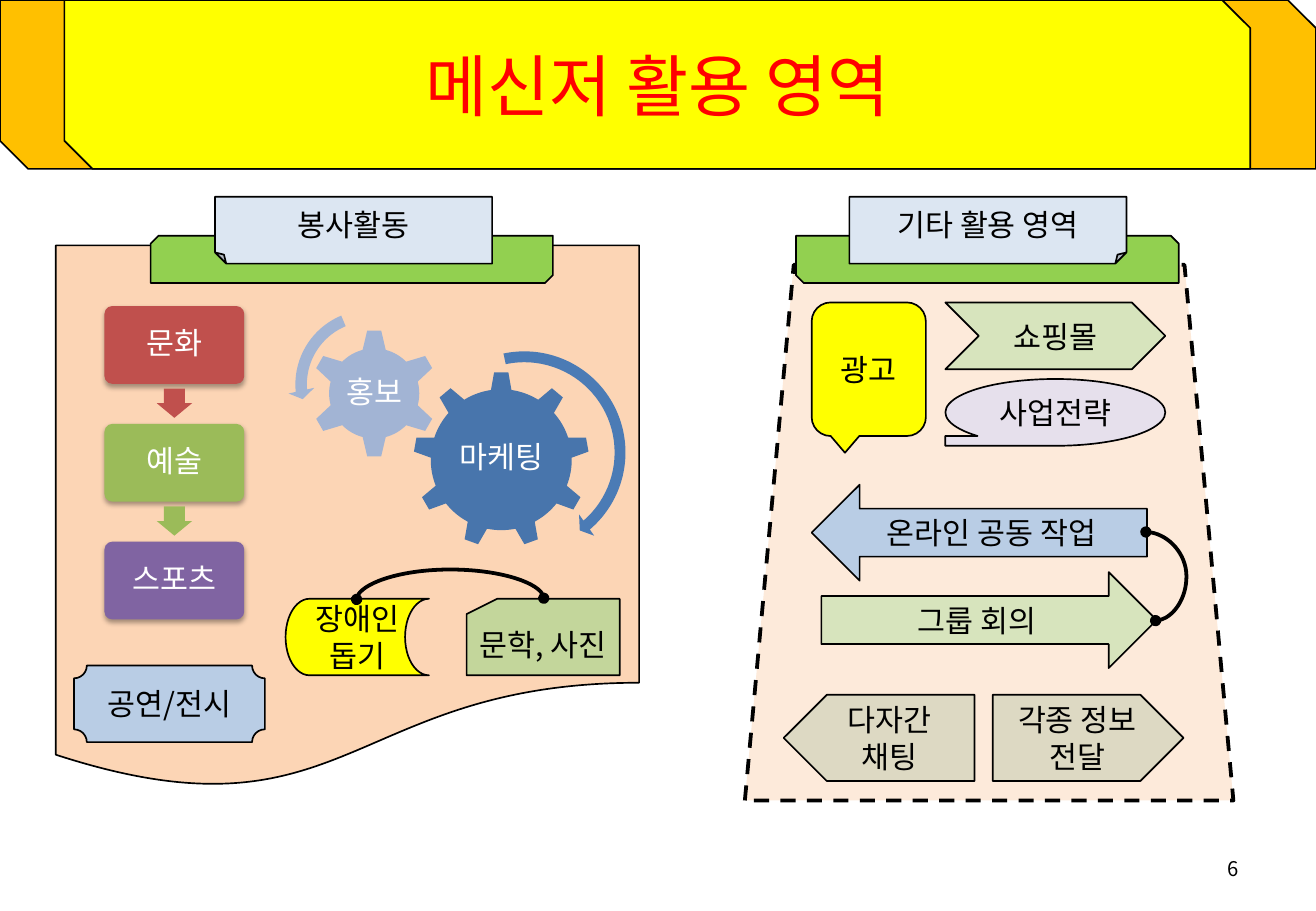
from dataclasses import dataclass

from lxml import etree
from pptx import Presentation
from pptx.dml.color import RGBColor
from pptx.enum.dml import MSO_LINE
from pptx.enum.shapes import MSO_CONNECTOR, MSO_SHAPE
from pptx.enum.text import MSO_ANCHOR, PP_ALIGN
from pptx.oxml.ns import qn
from pptx.util import Pt

PX = 9144
CURVE = MSO_CONNECTOR.CURVE
DASH = MSO_LINE.DASH
MIDDLE = MSO_ANCHOR.MIDDLE
CENTER, RIGHT = PP_ALIGN.CENTER, PP_ALIGN.RIGHT
SNIP = MSO_SHAPE.SNIP_2_DIAG_RECTANGLE
FOLD = MSO_SHAPE.FOLDED_CORNER
DOCUMENT = MSO_SHAPE.FLOWCHART_DOCUMENT
ROUND = MSO_SHAPE.ROUNDED_RECTANGLE
DOWN = MSO_SHAPE.DOWN_ARROW
GEAR_6, GEAR_9 = MSO_SHAPE.GEAR_6, MSO_SHAPE.GEAR_9
TURN_RIGHT = MSO_SHAPE.CIRCULAR_ARROW
TURN_LEFT = MSO_SHAPE.LEFT_CIRCULAR_ARROW
STORAGE = MSO_SHAPE.FLOWCHART_STORED_DATA
CARD = MSO_SHAPE.FLOWCHART_CARD
PLAQUE = MSO_SHAPE.PLAQUE
TRAPEZOID = MSO_SHAPE.TRAPEZOID
CALLOUT = MSO_SHAPE.ROUNDED_RECTANGULAR_CALLOUT
CHEVRON = MSO_SHAPE.CHEVRON
TAPE = MSO_SHAPE.FLOWCHART_SEQUENTIAL_ACCESS_STORAGE
LEFT_ARROW, RIGHT_ARROW = MSO_SHAPE.LEFT_ARROW, MSO_SHAPE.RIGHT_ARROW
PENTAGON = MSO_SHAPE.PENTAGON


@dataclass(frozen=True)
class Theme:
    font: str = "Noto Sans CJK KR"
    title: int = 40
    body: int = 18
    small: int = 12
    black: str = "000000"
    white: str = "FFFFFF"
    title_red: str = "FF0000"
    yellow: str = "FFFF00"
    orange: str = "FFC000"
    green: str = "92D050"
    peach: str = "FCD5B5"
    pale_peach: str = "FDEADA"
    pale_blue: str = "DCE6F2"
    blue: str = "B9CDE5"
    olive: str = "C3D69B"
    pale_olive: str = "D7E4BD"
    lilac: str = "E6E0EC"
    tan: str = "DDD9C3"
    flow_red: str = "C0504D"
    flow_green: str = "9BBB59"
    flow_purple: str = "8064A2"
    gear_dark: str = "4875AC"
    gear_light: str = "A2B4D4"
    turn_dark: str = "4B7BB5"
    turn_light: str = "A1B4D4"


def put_text(tf, text, *, font, size, color, align=CENTER, wrap=False, spacing=None):
    tf.word_wrap = wrap
    tf.vertical_anchor = MIDDLE
    for i, line in enumerate(text.split("\n")):
        p = tf.add_paragraph() if i else tf.paragraphs[0]
        p.alignment = align
        if spacing:
            p.line_spacing = spacing
        r = p.add_run()
        r.text = line
        r.font.size = Pt(size)
        r.font.color.rgb = RGBColor.from_string(color)
        r.font.name = font
        etree.SubElement(r.font._element, qn("a:ea"), typeface=font)


class Board:
    def __init__(self, slide, theme):
        self.s, self.t = slide, theme

    def shape(self, kind, x, y, w, h, fill, text="", *, line=1, dash=None, flip=False,
              adj=(), shadow=False, size=None, color=None, spacing=None):
        sp = self.s.shapes.add_shape(kind, x * PX, y * PX, w * PX, h * PX)
        sp.shadow.inherit = False
        sp.fill.solid()
        sp.fill.fore_color.rgb = RGBColor.from_string(fill)
        if line:
            sp.line.color.rgb = RGBColor.from_string(self.t.black)
            sp.line.width = Pt(line)
        else:
            sp.line.fill.background()
        if dash:
            sp.line.dash_style = dash
        if flip:
            sp._element.spPr.find(qn("a:xfrm")).set("flipH", "1")
        for i, value in enumerate(adj):
            sp.adjustments[i] = value
        if shadow:
            self.cast_shadow(sp)
        if text:
            put_text(sp.text_frame, text, font=self.t.font, size=size or self.t.body,
                     color=color or self.t.black, spacing=spacing)
        return sp

    def cast_shadow(self, sp):
        effects = sp._element.spPr.find(qn("a:effectLst"))
        outer = etree.SubElement(effects, qn("a:outerShdw"), blurRad=str(Pt(3.1)),
                                 dist=str(Pt(1.8)), dir="5400000", rotWithShape="0")
        clr = etree.SubElement(outer, qn("a:srgbClr"), val=self.t.black)
        etree.SubElement(clr, qn("a:alpha"), val="35000")

    def smart(self, kind, x, y, w, h, fill, text="", **fmt):
        return self.shape(kind, x, y, w, h, fill, text, line=0, color=self.t.white,
                          spacing=0.9, **fmt)

    def text(self, x, y, w, h, text, **fmt):
        tb = self.s.shapes.add_textbox(x * PX, y * PX, w * PX, h * PX)
        put_text(tb.text_frame, text, font=self.t.font, wrap=True, **fmt)

    def header(self, x, w, label_x, text, flip=False):
        self.shape(SNIP, x, 194, w, 39, self.t.green, flip=flip)
        self.shape(FOLD, label_x, 162, 228, 55, self.t.pale_blue, text, flip=flip)

    def curve(self, x1, y1, x2, y2, bend, turn=0):
        c = self.s.shapes.add_connector(CURVE, x1 * PX, y1 * PX, x2 * PX, y2 * PX)
        c.line.color.rgb = RGBColor.from_string(self.t.black)
        c.line.width = Pt(2.25)
        pr = c._element.spPr
        if turn:
            pr.find(qn("a:xfrm")).set("rot", str(turn * 60000))
        guides = pr.find(qn("a:prstGeom")).get_or_add_avLst()
        etree.SubElement(guides, qn("a:gd"), name="adj1", fmla=f"val {int(bend * 100000)}")
        ln = pr.find(qn("a:ln"))
        for end in ("a:headEnd", "a:tailEnd"):
            etree.SubElement(ln, qn(end), type="oval")
        etree.SubElement(pr, qn("a:effectLst"))


def volunteer_panel(b, t):
    b.shape(DOCUMENT, 46, 202, 480, 449, t.peach)
    b.header(124, 331, 177, "봉사활동", flip=True)
    steps = [("문화", t.flow_red), ("예술", t.flow_green), ("스포츠", t.flow_purple)]
    for i, (name, color) in enumerate(steps):
        y = 252 + 97 * i
        b.smart(ROUND, 86, y, 115, 64, color, name, adj=(0.1,), shadow=True)
        if i < len(steps) - 1:
            b.smart(DOWN, 129, y + 68, 29, 24, color, adj=(0.6, 0.5))
    b.smart(GEAR_9, 340, 306, 145, 145, t.gear_dark, "마케팅")
    b.smart(GEAR_6, 255, 271, 106, 106, t.gear_light, "홍보")
    b.smart(TURN_RIGHT, 342, 283, 179, 179, t.turn_dark,
            adj=(0.05, 3.13, 29.63, 154.86, 0.06))
    b.smart(TURN_LEFT, 237, 249, 135, 135, t.turn_light,
            adj=(0.07, 4.3, 104.89, 148.38, 0.08))
    b.shape(STORAGE, 235, 493, 118, 63, t.yellow, "장애인\n돕기")
    b.shape(CARD, 384, 493, 126, 63, t.olive, "문학, 사진")
    b.curve(371, 570, 370, 416, 25, turn=90)
    b.shape(PLAQUE, 61, 548, 157, 63, t.blue, "공연/전시")


def other_panel(b, t):
    b.shape(TRAPEZOID, 613, 218, 402, 441, t.pale_peach, line=2.25, dash=DASH, adj=(0.1,))
    b.header(655, 315, 699, "기타 활용 영역")
    b.shape(CALLOUT, 668, 249, 94, 110, t.yellow, "광고")
    b.shape(CHEVRON, 778, 249, 181, 55, t.pale_olive, "쇼핑몰")
    b.shape(TAPE, 778, 312, 181, 55, t.lilac, "사업전략", flip=True)
    b.shape(LEFT_ARROW, 668, 399, 276, 79, t.blue, "온라인 공동 작업")
    b.shape(RIGHT_ARROW, 676, 471, 276, 79, t.pale_olive, "그룹 회의")
    b.curve(943, 438, 951, 511, 4.18)
    b.shape(PENTAGON, 817, 572, 157, 71, t.tan, "각종 정보\n전달")
    b.shape(PENTAGON, 645, 572, 157, 71, t.tan, "다자간\n채팅", flip=True)


def main():
    t = Theme()
    prs = Presentation()
    prs.slide_width, prs.slide_height = 1083 * PX, 750 * PX
    b = Board(prs.slides.add_slide(prs.slide_layouts[6]), t)
    b.shape(SNIP, 0, 0, 1083, 139, t.orange)
    b.shape(SNIP, 53, 0, 976, 139, t.yellow, "메신저 활용 영역", size=t.title, color=t.title_red)
    b.text(776, 695, 253, 40, "6", size=t.small, color=t.black, align=RIGHT)
    volunteer_panel(b, t)
    other_panel(b, t)
    prs.save("out.pptx")


if __name__ == "__main__":
    main()
